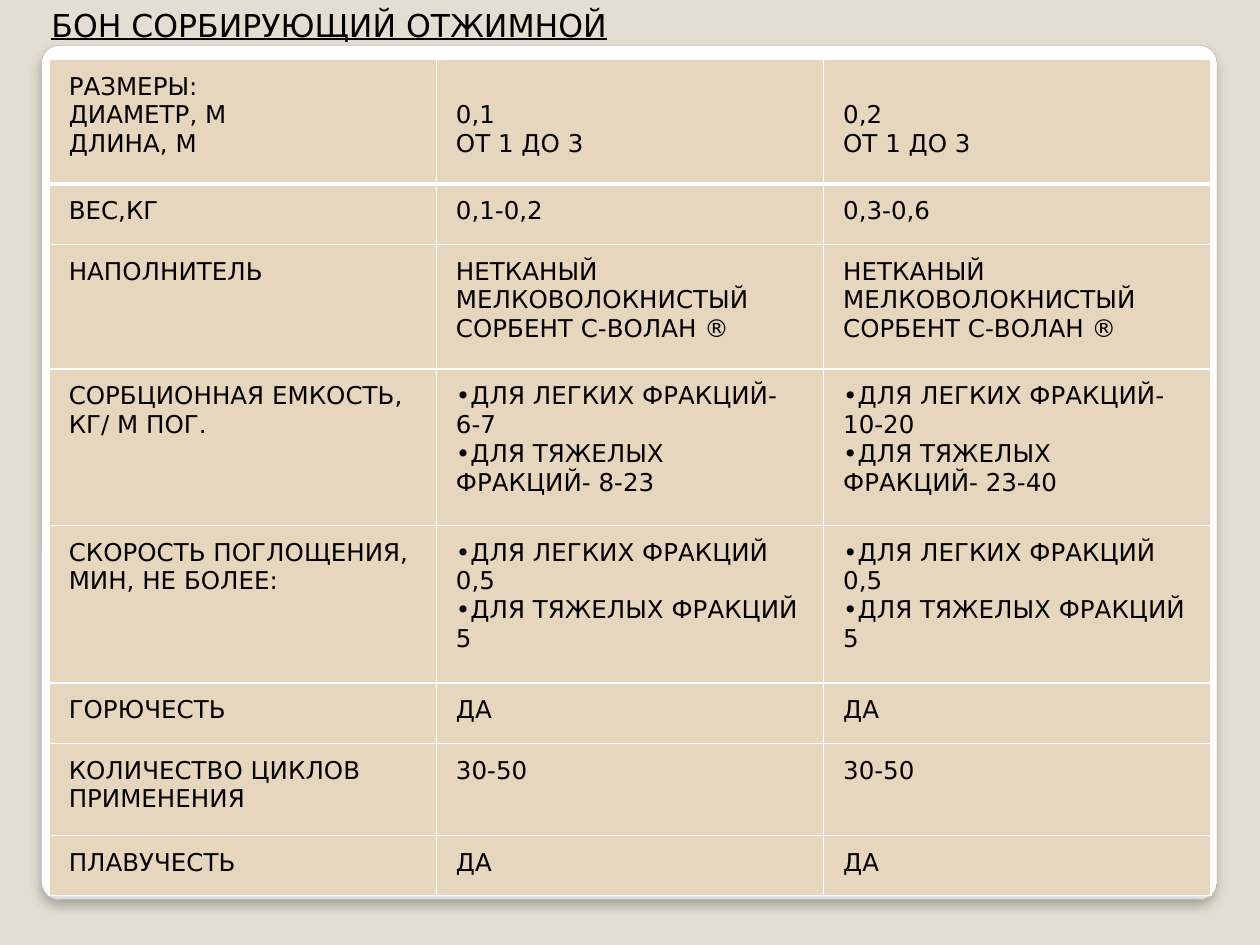
import lxml.etree
import pptx
import pptx.dml.color
import pptx.enum.lang
import pptx.enum.shapes
import pptx.enum.text
import pptx.oxml
import pptx.oxml.ns
import pptx.util
from dataclasses import dataclass

TITLE = "БОН СОРБИРУЮЩИЙ ОТЖИМНОЙ"
BULLET = "•"
FILLER = "НЕТКАНЫЙ МЕЛКОВОЛОКНИСТЫЙ СОРБЕНТ С-ВОЛАН ®"
SPEED = ["ДЛЯ ЛЕГКИХ ФРАКЦИЙ 0,5", "ДЛЯ ТЯЖЕЛЫХ ФРАКЦИЙ 5"]
ROWS = [
    (0.99, "РАЗМЕРЫ:\nДИАМЕТР, М\nДЛИНА, М", "0,1\nОТ 1 ДО 3", "0,2\nОТ 1 ДО 3"),
    (0.48, "ВЕС,КГ", "0,1-0,2", "0,3-0,6"),
    (0.99, "НАПОЛНИТЕЛЬ", FILLER, FILLER),
    (1.24, "СОРБЦИОННАЯ ЕМКОСТЬ, КГ/ М ПОГ.",
     ["ДЛЯ ЛЕГКИХ ФРАКЦИЙ- 6-7", "ДЛЯ ТЯЖЕЛЫХ ФРАКЦИЙ- 8-23"],
     ["ДЛЯ ЛЕГКИХ ФРАКЦИЙ- 10-20", "ДЛЯ ТЯЖЕЛЫХ ФРАКЦИЙ- 23-40"]),
    (1.25, "СКОРОСТЬ ПОГЛОЩЕНИЯ, МИН, НЕ БОЛЕЕ:", SPEED, SPEED),
    (0.48, "ГОРЮЧЕСТЬ", "ДА", "ДА"),
    (0.73, "КОЛИЧЕСТВО ЦИКЛОВ ПРИМЕНЕНИЯ", "30-50", "30-50"),
    (0.48, "ПЛАВУЧЕСТЬ", "ДА", "ДА"),
]


@dataclass(frozen=True)
class Theme:
    font: str = "DejaVu Sans"
    title_size: int = 18
    cell_size: int = 14
    text: str = "000000"
    background: str = "E3DED1"
    cell: str = "E6D6BD"
    border: str = "FFFFFF"
    outline: str = "A4A4A4"
    shadow: str = "000000"
    panel: tuple = ((0, "FFFFFF"), (98, "FFFFFF"), (99, "F7F7F7"), (100, "DADADA"))


THEME = Theme()
WIDTH, HEIGHT = 10, 7.5
PANEL = (0.33, 0.36, 9.33, 6.78)
TABLE_LEFT, TABLE_TOP, TABLE_WIDTH = 0.39, 0.47, 9.22
INSET_X, INSET_Y, LINE_HEIGHT = 11.2, 7.4, 16.4
NAMESPACE = pptx.oxml.ns.nsdecls("a")


def inches(*lengths):
    return [pptx.util.Inches(length) for length in lengths]


def color(value):
    return pptx.dml.color.RGBColor.from_string(value)


def add_text(paragraph, text, size, underline=None):
    for index, line in enumerate(text.split("\n")):
        if index:
            paragraph.add_line_break()
        run = paragraph.add_run()
        run.text = line
        run.font.name = THEME.font
        run.font.size = pptx.util.Pt(size)
        run.font.color.rgb = color(THEME.text)
        run.font.underline = underline
        run.font.language_id = pptx.enum.lang.MSO_LANGUAGE_ID.RUSSIAN


def add_panel(slide):
    panel = slide.shapes.add_shape(
        pptx.enum.shapes.MSO_SHAPE.ROUNDED_RECTANGLE, *inches(*PANEL))
    panel.adjustments[0] = 0.021
    panel.line.color.rgb = color(THEME.outline)
    panel.line.width = pptx.util.Pt(0.16)
    stops = "".join(
        f'<a:gs pos="{position * 1000}"><a:srgbClr val="{value}"/></a:gs>'
        for position, value in THEME.panel)
    properties = panel.element.spPr
    properties.find(pptx.oxml.ns.qn("a:ln")).addprevious(pptx.oxml.parse_xml(
        f'<a:gradFill {NAMESPACE}><a:gsLst>{stops}</a:gsLst>'
        '<a:lin ang="5400000" scaled="0"/></a:gradFill>'))
    properties.append(pptx.oxml.parse_xml(
        f'<a:effectLst {NAMESPACE}><a:outerShdw blurRad="{pptx.util.Pt(6)}" '
        f'dist="{pptx.util.Pt(4)}" dir="5400000" algn="t" rotWithShape="0">'
        f'<a:srgbClr val="{THEME.shadow}"><a:alpha val="25000"/></a:srgbClr>'
        '</a:outerShdw></a:effectLst>'))


def set_borders(cell, top, bottom):
    widths = {"lnL": 1, "lnR": 1, "lnT": top, "lnB": bottom}
    for index, (side, width) in enumerate(widths.items()):
        cell._tc.get_or_add_tcPr().insert(index, pptx.oxml.parse_xml(
            f'<a:{side} {NAMESPACE} w="{pptx.util.Pt(width)}"><a:solidFill>'
            f'<a:srgbClr val="{THEME.border}"/></a:solidFill></a:{side}>'))


def add_bullet(paragraph):
    properties = paragraph._p.get_or_add_pPr()
    for tag, attributes in (("a:buFont", {"typeface": THEME.font}),
                            ("a:buChar", {"char": BULLET})):
        lxml.etree.SubElement(properties, pptx.oxml.ns.qn(tag), attributes)


def fill_cell(cell, content):
    cell.fill.solid()
    cell.fill.fore_color.rgb = color(THEME.cell)
    cell.margin_left = cell.margin_right = pptx.util.Pt(INSET_X)
    cell.margin_top = cell.margin_bottom = pptx.util.Pt(INSET_Y)
    bulleted = isinstance(content, list)
    for index, text in enumerate(content if bulleted else [content]):
        frame = cell.text_frame
        paragraph = frame.add_paragraph() if index else frame.paragraphs[0]
        if bulleted:
            add_bullet(paragraph)
        add_text(paragraph, text, THEME.cell_size)


def add_properties_table(slide):
    heights = [row[0] for row in ROWS]
    columns = len(ROWS[0]) - 1
    table = slide.shapes.add_table(
        len(ROWS), columns,
        *inches(TABLE_LEFT, TABLE_TOP, TABLE_WIDTH, sum(heights))).table
    for column in table.columns:
        column.width = pptx.util.Inches(TABLE_WIDTH / columns)
    for row_index, (height, *contents) in enumerate(ROWS):
        table.rows[row_index].height = pptx.util.Inches(height)
        for column_index, content in enumerate(contents):
            cell = table.cell(row_index, column_index)
            fill_cell(cell, content)
            set_borders(cell, 3 if row_index == 1 else 1, 3 if row_index == 0 else 1)
            if row_index == 0 and column_index:
                cell.margin_top = pptx.util.Pt(INSET_Y + LINE_HEIGHT)


def add_title(slide):
    box = slide.shapes.add_textbox(*inches(0.31, 0, 4.62, 0.4))
    box.text_frame.word_wrap = False
    box.text_frame.auto_size = pptx.enum.text.MSO_AUTO_SIZE.SHAPE_TO_FIT_TEXT
    add_text(box.text_frame.paragraphs[0], TITLE, THEME.title_size, underline=True)


def main():
    presentation = pptx.Presentation()
    presentation.slide_width, presentation.slide_height = inches(WIDTH, HEIGHT)
    slide = presentation.slides.add_slide(presentation.slide_layouts[6])
    slide.background.fill.solid()
    slide.background.fill.fore_color.rgb = color(THEME.background)
    add_panel(slide)
    add_properties_table(slide)
    add_title(slide)
    presentation.save("out.pptx")


if __name__ == "__main__":
    main()
